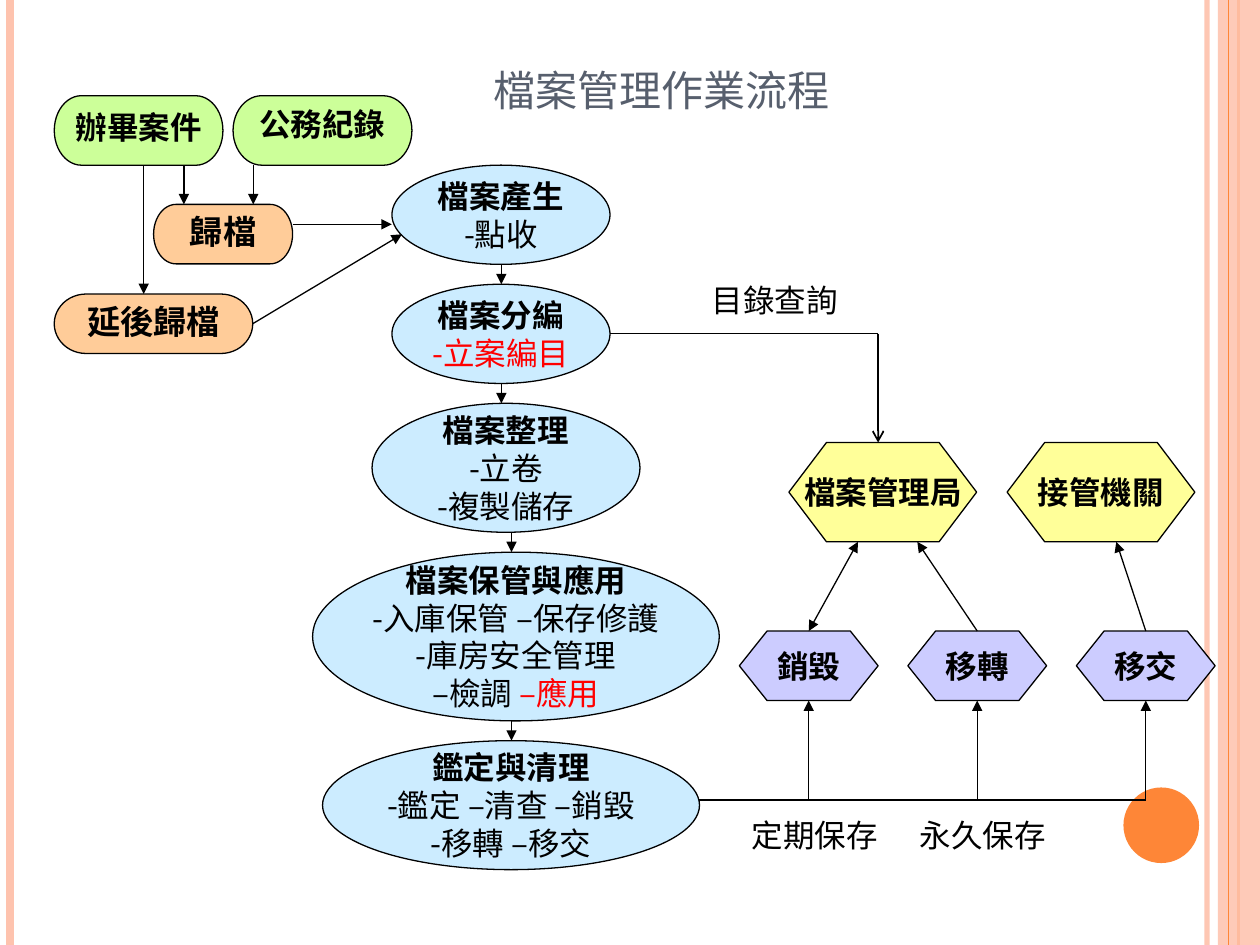
from pptx import Presentation
from pptx.dml.color import RGBColor
from pptx.enum import shapes, text
from pptx.oxml.ns import qn
from pptx.util import Pt
from lxml import etree

BLACK = RGBColor(0, 0, 0)
RED = RGBColor(0xFF, 0, 0)
SLATE = RGBColor(0x57, 0x5F, 0x6D)
ORANGE = RGBColor(0xFE, 0x86, 0x37)
PEACH = RGBColor(0xFE, 0xC3, 0xAE)
SKY = RGBColor(0xCC, 0xEC, 0xFF)
LIME = RGBColor(0xCC, 0xFF, 0x99)
APRICOT = RGBColor(0xFF, 0xCC, 0x99)
YELLOW = RGBColor(0xFF, 0xFF, 0x99)
LILAC = RGBColor(0xCC, 0xCC, 0xFF)
SANS, SERIF = "Noto Sans CJK SC", "TeX Gyre Schola"
OVAL = shapes.MSO_SHAPE.OVAL
TERMINATOR = shapes.MSO_SHAPE.FLOWCHART_TERMINATOR
HEXAGON = shapes.MSO_SHAPE.FLOWCHART_PREPARATION
TOP, LEFT, BOTTOM, RIGHT = range(4)

# Stages: left, width, height, lines; each line is a list of (text, colour)
STAGES = [
    (224, 124.6, 56.7, [[("檔案產生", BLACK)], [("-點收", BLACK)]]),
    (224, 124.6, 56.7, [[("檔案分編", BLACK)], [("-立案編目", RED)]]),
    (212.6, 153.1, 73.7, [[("檔案整理", BLACK)], [("-立卷", BLACK)],
                          [("-複製儲存", BLACK)]]),
    (178.6, 232.4, 96.4, [[("檔案保管與應用", BLACK)], [("-入庫保管 –保存修護", BLACK)],
                          [("-庫房安全管理", BLACK)],
                          [("–檢調 ", BLACK), ("–應用", RED)]]),
    (184.3, 215.4, 73.7, [[("鑑定與清理", BLACK)], [("-鑑定 –清查 –銷毀", BLACK)],
                          [("-移轉 –移交", BLACK)]]),
]
STAGE_TOP, STAGE_GAP = 94.4, 11.34
STAGE_ARROW_X = [286.5, 286.5, 292.3, 292.3]

# Sources: name, box, fill, size, hanging indent, line spacing
SOURCES = [
    ("公務紀錄", (133.2, 54.7, 102.2, 39.7), LIME, 18, 27, 0.8),
    ("辦畢案件", (31, 54.7, 96.4, 39.7), LIME, 18, 21.6, 0.9),
    ("歸檔", (87.8, 116.8, 79.4, 34), APRICOT, 19, 27, 0.8),
    ("延後歸檔", (31, 168, 113.4, 34), APRICOT, 19, 27, 0.8),
]
AGENCIES = ["檔案管理局", "接管機關"]
DISPOSALS = ["銷毀", "移轉", "移交"]
AGENCY_X, AGENCY_PITCH, AGENCY_Y, AGENCY_W, AGENCY_H = 450.8, 124.7, 252.9, 107.3, 56.7
DISPOSAL_X, DISPOSAL_PITCH, DISPOSAL_Y, DISPOSAL_W, DISPOSAL_H = 422.5, 96.3, 360.6, 79.3, 39.7
BUS_Y, QUERY_X, QUERY_Y = 457.2, 501.8, 190.6
AGENCY_BOTTOM = AGENCY_Y + AGENCY_H

LABELS = [("目錄查詢", 399.6, 157), ("定期保存", 422.6, 463), ("永久保存", 518.4, 463)]

# Source arrows: start, end, joined start (name, side)
SOURCE_ARROWS = [
    ((144.4, 185), (229.7, 133.9), ("延後歸檔", RIGHT)),
    ((167.2, 128.2), (223.9, 128.2), None),
    ((144.7, 94.4), (144.7, 116.8), None),
    ((105.1, 94.4), (105.1, 116.8), None),
    ((82.1, 94.4), (82.1, 168), None),
]
# Disposal, where its arrow meets an agency, double-headed
AGENCY_ARROWS = [("移交", 637.9, False), ("移轉", 524.2, False), ("銷毀", 490.3, True)]

prs = Presentation()
prs.slide_width, prs.slide_height = Pt(720), Pt(540)
s = prs.slides.add_slide(prs.slide_layouts[6])
nodes = {}


def set_alpha(fill, percent):
    """Make a solid fill partly transparent."""
    color = fill._xPr.find(qn("a:solidFill"))[0]
    etree.SubElement(color, qn("a:alpha")).set("val", str(percent * 1000))


def add_shape(kind, box, fill, outlined=True):
    sp = s.shapes.add_shape(kind, *map(Pt, box))
    sp.shadow.inherit = False
    sp.fill.solid()
    sp.fill.fore_color.rgb = fill
    if outlined:
        sp.line.color.rgb = BLACK
        sp.line.width = Pt(0.75)
    else:
        sp.line.fill.background()
    return sp


def add_line(start, end, tail="triangle", head=None, width=0.75, color=BLACK,
             begin_at=None, end_at=None):
    c = s.shapes.add_connector(shapes.MSO_CONNECTOR.STRAIGHT, *map(Pt, start + end))
    if begin_at:
        c.begin_connect(nodes[begin_at[0]], begin_at[1])
    if end_at:
        c.end_connect(nodes[end_at[0]], end_at[1])
    c.line.color.rgb = color
    c.line.width = Pt(width)
    ln = c.line._get_or_add_ln()
    for tag, arrow in (("a:headEnd", head), ("a:tailEnd", tail)):
        if arrow:
            etree.SubElement(ln, qn(tag)).set("type", arrow)
    etree.SubElement(c._element.spPr, qn("a:effectLst"))
    return c


def write(sp, lines, font, size=18, bold_first=True, align=text.PP_ALIGN.CENTER,
          anchor=text.MSO_ANCHOR.MIDDLE, wrap=False):
    """Fill a shape with lines of (text, colour) runs."""
    tf = sp.text_frame
    tf.word_wrap = wrap
    tf.vertical_anchor = anchor
    for i, line in enumerate(lines):
        p = tf.add_paragraph() if i else tf.paragraphs[0]
        p.alignment = align
        for content, color in line:
            r = p.add_run()
            r.text = content
            r.font.name = font
            r.font.size = Pt(size)
            r.font.bold = bold_first and i == 0
            r.font.color.rgb = color
            etree.SubElement(r._r.get_or_add_rPr(), qn("a:ea")).set("typeface", SANS)
    return tf


def add_hexagon(name, box, fill):
    nodes[name] = add_shape(HEXAGON, box, fill)
    write(nodes[name], [[(name, BLACK)]], SERIF)


# Slide frame
def add_stripe(x, width, color):
    return add_line((x, 0), (x, 540), tail=None, width=width, color=color)


set_alpha(add_stripe(689.8, 3, PEACH).line.fill, 93)
add_stripe(5.8, 4.5, PEACH)
add_stripe(707.8, 1.5, ORANGE)
set_alpha(add_shape(shapes.MSO_SHAPE.RECTANGLE, (696, 0, 24, 540), PEACH, False).fill, 87)
add_stripe(702, 0.75, ORANGE)
add_shape(OVAL, (642, 450, 43.2, 43.2), ORANGE, False)

title = s.shapes.add_textbox(Pt(275), Pt(0), Pt(445), Pt(70.6))
tf = write(title, [[("檔案管理作業流程", SLATE)]], SERIF, 30, False,
           text.PP_ALIGN.LEFT, text.MSO_ANCHOR.BOTTOM, True)
tf.paragraphs[0].runs[0]._r.get_or_add_rPr().set("cap", "small")

# Stages and the arrows between them
y = STAGE_TOP
for i, (x, w, h, lines) in enumerate(STAGES):
    write(add_shape(OVAL, (x, y, w, h), SKY), lines, SANS)
    y += h
    if i < len(STAGE_ARROW_X):
        add_line((STAGE_ARROW_X[i], y), (STAGE_ARROW_X[i], y + STAGE_GAP))
    y += STAGE_GAP

for name, box, fill, size, indent, spacing in SOURCES:
    nodes[name] = add_shape(TERMINATOR, box, fill)
    tf = write(nodes[name], [[(name, BLACK)]], SERIF, size,
               anchor=text.MSO_ANCHOR.TOP, wrap=True)
    p = tf.paragraphs[0]
    p.line_spacing = spacing
    pPr = p._p.get_or_add_pPr()
    pPr.set("marL", str(Pt(indent)))
    pPr.set("indent", str(-Pt(indent)))
for start, end, joint in SOURCE_ARROWS:
    add_line(start, end, begin_at=joint)

for i, name in enumerate(AGENCIES):
    add_hexagon(name, (AGENCY_X + i * AGENCY_PITCH, AGENCY_Y, AGENCY_W, AGENCY_H), YELLOW)
centers = {}
for i, name in enumerate(DISPOSALS):
    x = DISPOSAL_X + i * DISPOSAL_PITCH
    centers[name] = x + DISPOSAL_W / 2
    add_hexagon(name, (x, DISPOSAL_Y, DISPOSAL_W, DISPOSAL_H), LILAC)
    add_line((centers[name], BUS_Y), (centers[name], DISPOSAL_Y + DISPOSAL_H),
             end_at=(name, BOTTOM))
add_line((399.7, BUS_Y), (centers["移交"], BUS_Y), tail=None)
for name, x, double in AGENCY_ARROWS:
    add_line((centers[name], DISPOSAL_Y), (x, AGENCY_BOTTOM),
             head="triangle" if double else None, begin_at=(name, TOP))

add_line((348.6, QUERY_Y), (QUERY_X, QUERY_Y), tail=None, width=1)
add_line((QUERY_X, QUERY_Y), (QUERY_X, AGENCY_Y), tail="arrow", width=1)

for label, x, y in LABELS:
    box = s.shapes.add_textbox(Pt(x), Pt(y), Pt(87), Pt(29))
    write(box, [[(label, BLACK)]], SANS, bold_first=False,
          align=text.PP_ALIGN.LEFT, anchor=text.MSO_ANCHOR.TOP)

prs.save("out.pptx")
